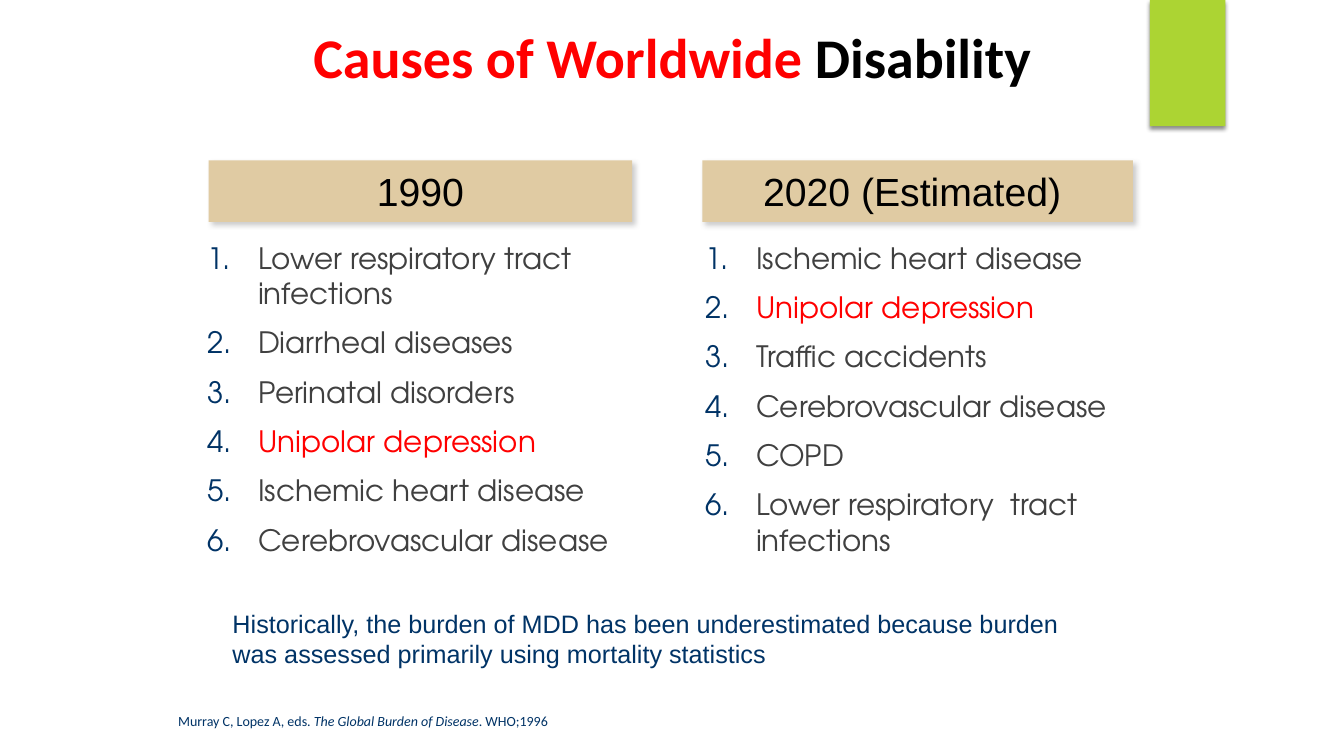
from lxml.etree import SubElement
from pptx import Presentation
from pptx.dml.color import RGBColor
from pptx.enum.shapes import MSO_SHAPE as Shape
from pptx.enum.text import MSO_ANCHOR as Anchor, MSO_AUTO_SIZE as AutoSize, PP_ALIGN as Align
from pptx.oxml.ns import qn
from pptx.util import Cm, Pt

RED = RGBColor(0xFF, 0x00, 0x00)
BLACK = RGBColor(0x00, 0x00, 0x00)
GREY = RGBColor(0x40, 0x40, 0x40)
SHADOW_GREY = RGBColor(0x80, 0x80, 0x80)
NAVY = RGBColor(0x00, 0x33, 0x66)
GREEN = RGBColor(0xAC, 0xD4, 0x33)
TAN = RGBColor(0xE0, 0xCB, 0xA3)

TITLE = [("Causes of Worldwide ", RED), ("Disability", BLACK)]
HIGHLIGHT = "Unipolar depression"
# Heading, heading left and width, list left and height, causes
COLUMNS = [
    ("1990", 5.26, 10.67, 4.98, 8.26, [
        "Lower respiratory tract infections",
        "Diarrheal diseases",
        "Perinatal disorders",
        "Unipolar depression",
        "Ischemic heart disease",
        "Cerebrovascular disease",
    ]),
    ("2020 (Estimated) ", 17.7, 10.85, 17.53, 9.5, [
        "Ischemic heart disease",
        "Unipolar depression",
        "Traffic accidents",
        "Cerebrovascular disease",
        "COPD",
        "Lower respiratory  tract infections",
    ]),
]
REMARK = ("Historically, the burden of MDD has been underestimated because "
          "burden was assessed primarily using mortality statistics")
CITATION = [("Murray C, Lopez A, eds. ", False),
            ("The Global Burden of Disease", True), (". WHO;1996", False)]

HEADING_TOP, HEADING_HEIGHT = 4.04, 1.55
LIST_TOP, LIST_WIDTH = 5.92, 11.23


def place(shape, left, top, width, height):
    shape.left, shape.top = Cm(left), Cm(top)
    shape.width, shape.height = Cm(width), Cm(height)


def set_font(para, name, size, color=None):
    para.font.name, para.font.size = name, Pt(size)
    if color is not None:
        para.font.color.rgb = color


def add_block(page, area, fill, color, opacity, blur, distance, angle):
    """Add a borderless rectangle with an outer shadow."""
    block = page.shapes.add_shape(Shape.RECTANGLE, *map(Cm, area))
    block.fill.solid()
    block.fill.fore_color.rgb = fill
    block.line.fill.background()
    block.shadow.inherit = False
    effects = block._element.spPr.find(qn("a:effectLst"))
    shadow = SubElement(effects, qn("a:outerShdw"), blurRad=str(Pt(blur)),
                        dist=str(Pt(distance)), dir=str(angle * 60000),
                        algn="ctr", rotWithShape="0")
    tint = SubElement(shadow, qn("a:srgbClr"), val=str(color))
    SubElement(tint, qn("a:alpha"), val=str(opacity * 1000))
    return block


def number(para):
    """Give a paragraph a navy automatic number and a hanging indent."""
    props = para._p.get_or_add_pPr()
    props.set("marL", str(Cm(1.27)))
    props.set("indent", str(-Cm(1.27)))
    color = SubElement(props, qn("a:buClr"))
    SubElement(color, qn("a:srgbClr"), val=str(NAVY))
    SubElement(props, qn("a:buFontTx"))
    SubElement(props, qn("a:buAutoNum"), type="arabicPeriod")


def fill_list(body, causes):
    frame = body.text_frame
    frame.text = "\n".join(causes)
    frame.auto_size = AutoSize.NONE
    for index, para in enumerate(frame.paragraphs):
        number(para)
        para.space_before = Pt(10 if index else 0)
        set_font(para, "TeX Gyre Adventor", 21,
                 RED if para.text == HIGHLIGHT else GREY)


def add_heading(page, text, left, width):
    area = (left, HEADING_TOP, width, HEADING_HEIGHT)
    frame = add_block(page, area, TAN, SHADOW_GREY, 40, 4, 3, 45).text_frame
    frame.word_wrap = False
    frame.vertical_anchor = Anchor.MIDDLE
    para = frame.paragraphs[0]
    para.alignment = Align.CENTER
    para.add_run().text = text
    set_font(para, "Arial", 28, BLACK)


def add_text(page, *area):
    frame = page.shapes.add_textbox(*map(Cm, area)).text_frame
    frame.word_wrap = True
    return frame.paragraphs[0]


def main():
    deck = Presentation()
    deck.slide_width, deck.slide_height = Cm(33.87), Cm(19.05)
    page = deck.slides.add_slide(deck.slide_layouts.get_by_name("Two Content"))
    title, *bodies = page.placeholders

    add_block(page, (28.98, 0, 1.9, 3.18), GREEN, BLACK, 45, 3, 2, 90)

    place(title, 5.51, 0.43, 22.86, 1.96)
    title.text_frame.auto_size = AutoSize.NONE
    title.text_frame.vertical_anchor = Anchor.MIDDLE
    para = title.text_frame.paragraphs[0]
    para.alignment = Align.CENTER
    set_font(para, "Calibri", 40)
    para.font.bold = True
    for text, color in TITLE:
        span = para.add_run()
        span.text = text
        span.font.color.rgb = color

    for body, column in zip(bodies, COLUMNS):
        heading, heading_left, heading_width, left, height, causes = column
        add_heading(page, heading, heading_left, heading_width)
        place(body, left, LIST_TOP, LIST_WIDTH, height)
        fill_list(body, causes)

    para = add_text(page, 5.61, 15.21, 22.58, 1.78)
    para.add_run().text = REMARK
    set_font(para, "Arial", 18, NAVY)

    para = add_text(page, 4.24, 17.83, 11.2, 1.12)
    set_font(para, "Calibri", 10, NAVY)
    for text, italic in CITATION:
        span = para.add_run()
        span.text = text
        span.font.italic = italic

    deck.save("out.pptx")


if __name__ == "__main__":
    main()
